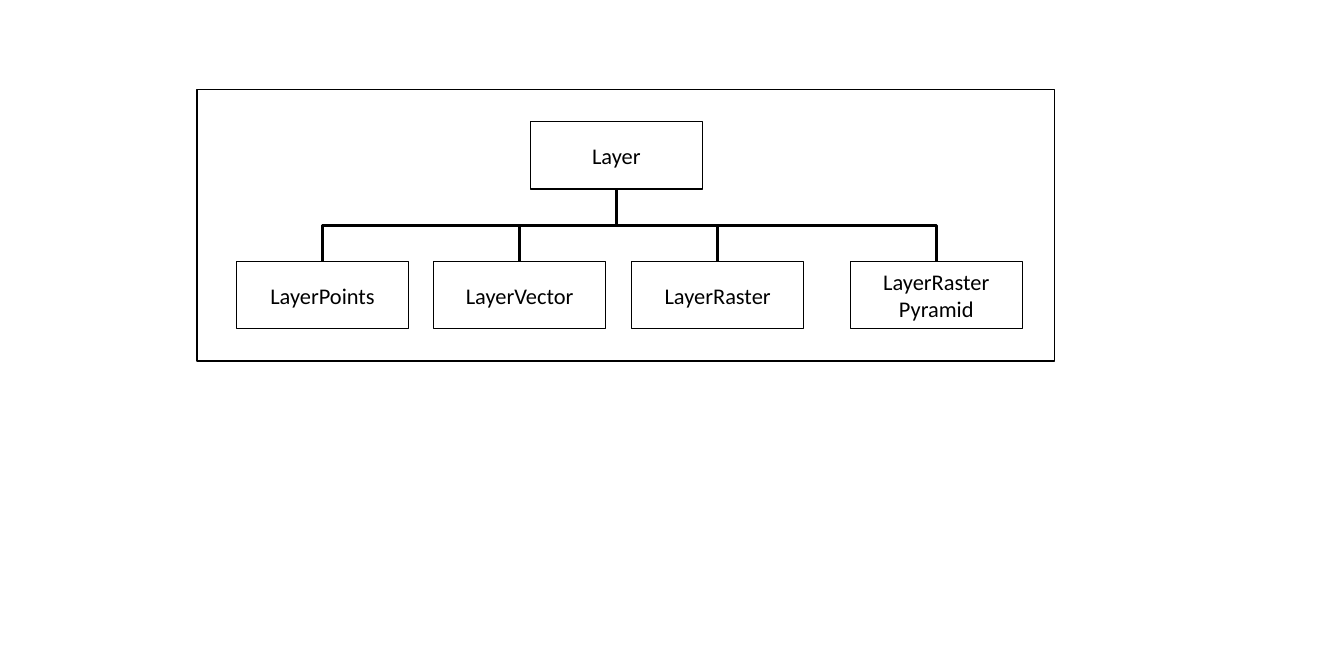
from pptx import Presentation
from pptx.dml.color import RGBColor
from pptx.enum.shapes import MSO_CONNECTOR as Link, MSO_SHAPE as Form
from pptx.enum.text import MSO_ANCHOR as Anchor, PP_ALIGN as Align
from pptx.oxml.xmlchemy import OxmlElement as Element
from pptx.util import Pt

BLACK = RGBColor(0, 0, 0)
WHITE = RGBColor(255, 255, 255)
WIDE, HIGH = 138.2, 54
KIDS = [
    (31.7, "LayerPoints"),
    (190.1, "LayerVector"),
    (349.2, "LayerRaster"),
    (524.9, "LayerRaster\nPyramid"),
]


def add_rect(slide, left, top, width, height):
    rect = slide.shapes.add_shape(
        Form.RECTANGLE, Pt(left), Pt(top), Pt(width), Pt(height))
    rect.shadow.inherit = False
    rect.fill.background()
    rect.line.color.rgb = BLACK
    rect.line.width = Pt(1)
    return rect


def add_node(slide, left, top, label):
    node = add_rect(slide, left, top, WIDE, HIGH)
    node.fill.solid()
    node.fill.fore_color.rgb = WHITE
    frame = node.text_frame
    frame.text = label
    frame.vertical_anchor = Anchor.MIDDLE
    for line in frame.paragraphs:
        line.alignment = Align.CENTER
        line.font.name = "Calibri"
        line.font.size = Pt(18)
        line.font.color.rgb = BLACK


def add_branch(slide, x1, y1, x2, y2):
    mid_x, mid_y = (x1 + x2) / 2, (y1 + y2) / 2
    half_x, half_y = abs(x2 - x1) / 2, (y2 - y1) / 2
    side = half_y if x2 > x1 else -half_y
    branch = slide.shapes.add_connector(
        Link.ELBOW, Pt(mid_x + side), Pt(mid_y - half_x),
        Pt(mid_x - side), Pt(mid_y + half_x))
    branch.line.color.rgb = BLACK
    branch.line.width = Pt(2)
    props = branch._element.spPr
    turn = 270 if x2 > x1 else 90
    props.xfrm.set("rot", str(turn * 60000))
    props.append(Element("a:effectLst"))


def add_tree(slide, left, top, width, height):
    root_x, root_y = left + 267.8, top + 25.9
    kid_y = top + 138.2
    add_node(slide, root_x, root_y, "Layer")
    for shift, label in KIDS:
        kid_x = left + shift
        add_node(slide, kid_x, kid_y, label)
        add_branch(slide, root_x + WIDE / 2, root_y + HIGH,
                   kid_x + WIDE / 2, kid_y)
    add_rect(slide, left, top, width, height)


def main():
    deck = Presentation()
    deck.slide_width, deck.slide_height = Pt(1080), Pt(540)
    slide = deck.slides.add_slide(deck.slide_layouts[6])
    add_tree(slide, 158.4, 72, 689, 218.2)
    deck.save("out.pptx")


if __name__ == "__main__":
    main()
